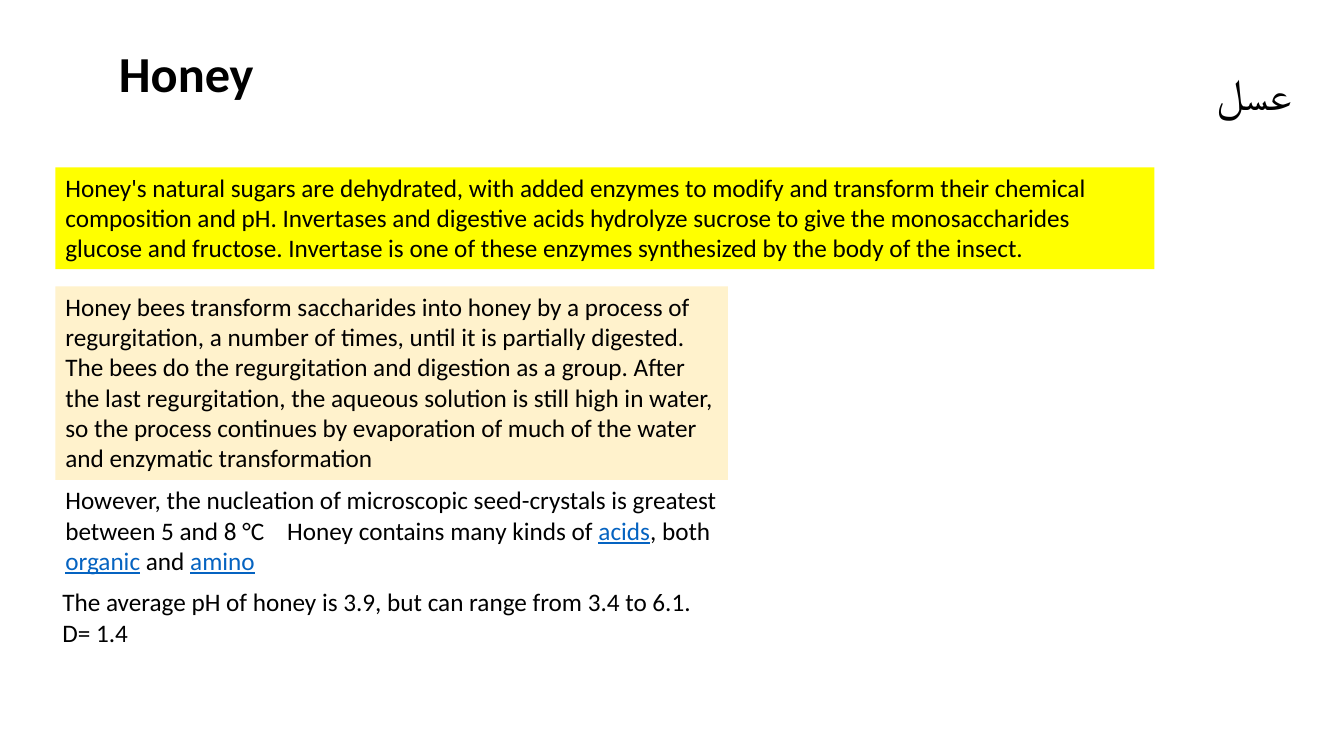
from pptx import Presentation
from pptx.dml.color import RGBColor
from pptx.enum.shapes import MSO_SHAPE as Shape
from pptx.enum.text import MSO_ANCHOR as Anchor, MSO_AUTO_SIZE as AutoSize, PP_ALIGN as Align
from pptx.oxml import parse_xml
from pptx.oxml.ns import nsdecls
from pptx.util import Inches, Pt

BLACK = RGBColor(0x00, 0x00, 0x00)
YELLOW = RGBColor(0xFF, 0xFF, 0x00)
CREAM = RGBColor(0xFF, 0xF2, 0xCC)
LINK_BLUE = RGBColor(0x05, 0x63, 0xC1)

LEFT = 0.55
COLUMN = 6.67

SUGARS = (
    "Honey's natural sugars are dehydrated, with added enzymes to modify and transform "
    "their chemical composition and pH. Invertases and digestive acids hydrolyze sucrose "
    "to give the monosaccharides glucose and fructose. Invertase is one of these enzymes "
    "synthesized by the body of the insect."
)
BEES = (
    "Honey bees transform saccharides into honey by a process of regurgitation, a number "
    "of times, until it is partially digested. The bees do the regurgitation and digestion "
    "as a group. After the last regurgitation, the aqueous solution is still high in water, "
    "so the process continues by evaporation of much of the water and enzymatic transformation"
)
CRYSTALS = (
    "However, the nucleation of microscopic seed-crystals is greatest between 5 and 8 °C\t"
    "Honey contains many kinds of "
)
ACIDITY = "The average pH of honey is 3.9, but can range from 3.4 to 6.1.\nD= 1.4"


class HoneySlide:
    font = "Calibri"
    body_size = 18

    def __init__(self, prs):
        self.s = prs.slides.add_slide(prs.slide_layouts[5])

    def style_run(self, r, size, color=BLACK, bold=False, underline=False):
        r.font.name = self.font
        r.font.size = Pt(size)
        r.font.color.rgb = color
        r.font.bold = bold
        r.font.underline = underline

    def fill_text(self, sp, text, size, align=Align.LEFT, bold=False, wrap=True):
        tf = sp.text_frame
        tf.text = text
        tf.word_wrap = wrap
        tf.auto_size = AutoSize.SHAPE_TO_FIT_TEXT
        tf.vertical_anchor = Anchor.TOP
        for p in tf.paragraphs:
            p.alignment = align
            for r in p.runs:
                self.style_run(r, size, bold=bold)
        return tf

    def title(self, text, x, y, w, h):
        sp = self.s.shapes.title
        sp.left, sp.top, sp.width, sp.height = map(Inches, (x, y, w, h))
        self.fill_text(sp, text, 36, bold=True)

    def text(self, text, x, y, w, h, size=body_size, **layout):
        sp = self.s.shapes.add_textbox(*map(Inches, (x, y, w, h)))
        return self.fill_text(sp, text, size, **layout)

    def rtl_text(self, text, x, y, w, h):
        tf = self.text(text, x, y, w, h, size=32, align=Align.RIGHT)
        tf.paragraphs[0]._p.get_or_add_pPr().set("rtl", "1")

    def panel(self, text, color, x, y, w, h):
        sp = self.s.shapes.add_shape(Shape.RECTANGLE, *map(Inches, (x, y, w, h)))
        sp.shadow.inherit = False
        sp.fill.solid()
        sp.fill.fore_color.rgb = color
        sp.line.fill.background()
        self.fill_text(sp, text, self.body_size)

    def linked_text(self, parts, tab, x, y, w, h):
        """Add a paragraph whose every second part looks like a link, with one tab stop."""
        p = self.text("", x, y, w, h).paragraphs[0]
        for i, part in enumerate(parts):
            r = p.add_run()
            r.text = part
            is_link = i % 2 == 1
            self.style_run(r, self.body_size, LINK_BLUE if is_link else BLACK, underline=is_link)
        p._p.get_or_add_pPr().append(parse_xml(
            f'<a:tabLst {nsdecls("a")}><a:tab pos="{Inches(tab)}" algn="l"/></a:tabLst>'))


def main():
    prs = Presentation()
    prs.slide_width, prs.slide_height = Inches(13.33), Inches(7.5)
    slide = HoneySlide(prs)
    slide.rtl_text("عسل", 7.77, 0.6, 5.13, 0.64)
    slide.title("Honey", 1.08, 0.37, 3.05, 0.71)
    slide.panel(SUGARS, YELLOW, LEFT, 1.66, 10.9, 1.01)
    slide.panel(BEES, CREAM, LEFT, 2.84, COLUMN, 1.92)
    slide.linked_text([CRYSTALS, "acids", ", both ", "organic", " and ", "amino"],
                      2.2, LEFT, 4.76, COLUMN, 1.01)
    slide.text(ACIDITY, 0.52, 5.77, 6.52, 0.71, wrap=False)
    prs.save("out.pptx")


if __name__ == "__main__":
    main()
